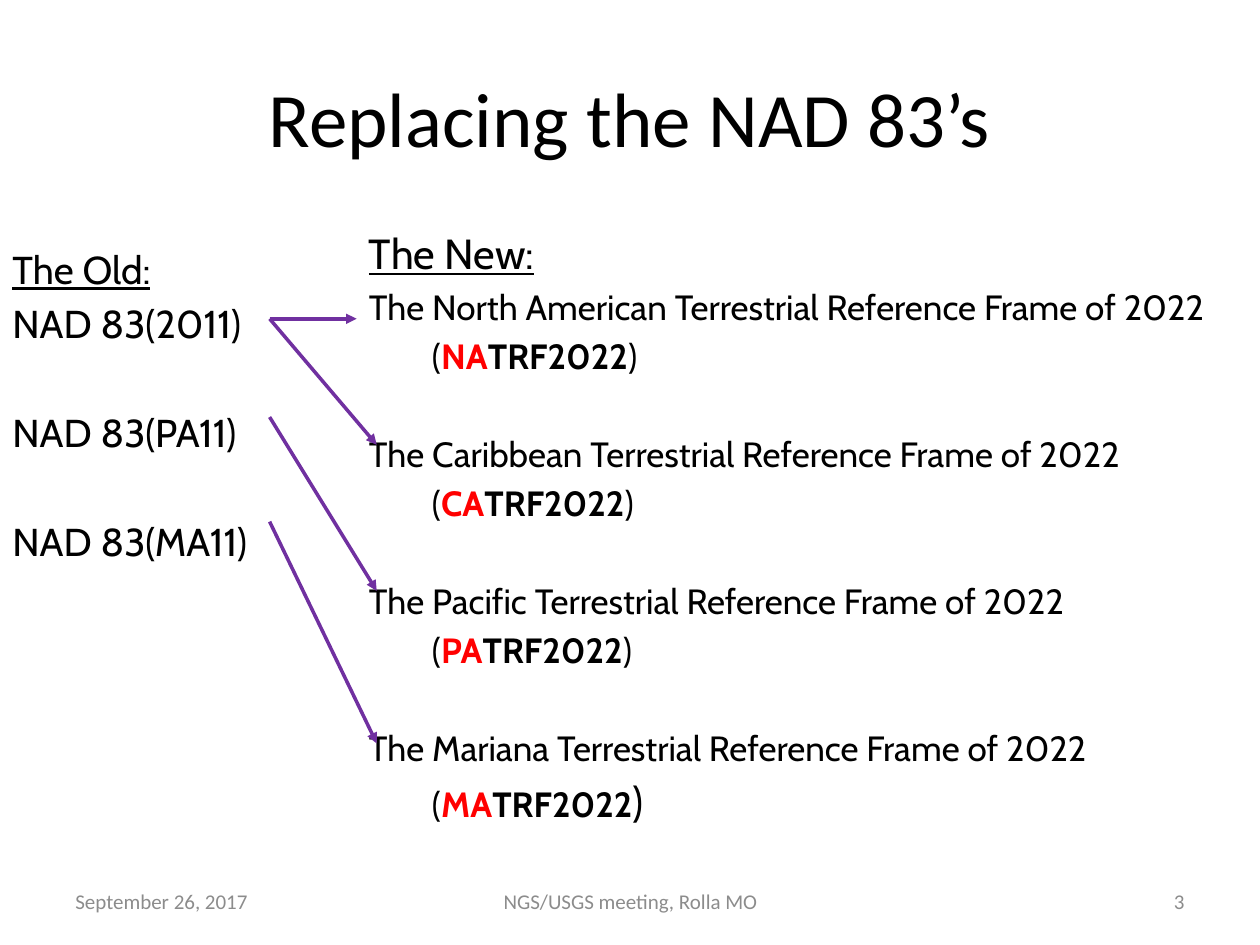
import dataclasses

import pptx
import pptx.dml.color
import pptx.enum.shapes
import pptx.enum.text
import pptx.oxml.ns
import pptx.util
from lxml import etree

Inches = pptx.util.Inches
Pt = pptx.util.Pt
ALIGN = pptx.enum.text.PP_ALIGN
ANCHOR = pptx.enum.text.MSO_ANCHOR


@dataclasses.dataclass(frozen=True)
class Theme:
    heading_font: str = "Calibri"
    body_font: str = "Cabin"
    text: str = "000000"
    accent: str = "FF0000"
    arrow: str = "7030A0"
    muted: str = "8C8C8C"
    title_size: float = 44
    new_size: float = 24
    old_size: float = 22.2
    frame_size: float = 20
    footer_size: float = 12
    arrow_width: float = 2


def rgb(value):
    return pptx.dml.color.RGBColor.from_string(value)


class Deck:
    def __init__(self, theme):
        self.theme = theme
        self.prs = pptx.Presentation()
        self.prs.slide_width, self.prs.slide_height = Inches(10), Inches(7.5)
        self.s = self.prs.slides.add_slide(self.prs.slide_layouts[5])

    def run(self, p, text, size, color=None, font=None, bold=False, underline=False):
        r = p.add_run()
        r.text = text
        r.font.name = font or self.theme.body_font
        r.font.size = Pt(size)
        r.font.color.rgb = rgb(color or self.theme.text)
        r.font.bold = bold
        r.font.underline = underline

    def title(self, text, x, y, w, h):
        sp = self.s.shapes.title
        sp.left, sp.top, sp.width, sp.height = map(Inches, (x, y, w, h))
        tf = sp.text_frame
        tf.vertical_anchor = ANCHOR.MIDDLE
        p = tf.paragraphs[0]
        p.alignment = ALIGN.CENTER
        self.run(p, text, self.theme.title_size, font=self.theme.heading_font)

    def box(self, x, y, w, h, anchor=ANCHOR.TOP):
        tf = self.s.shapes.add_textbox(*map(Inches, (x, y, w, h))).text_frame
        tf.word_wrap = True
        tf.vertical_anchor = anchor
        return tf

    def paragraph(self, tf, space_before):
        p = tf.add_paragraph()
        p.space_before = Pt(space_before)
        return p

    def old_list(self, heading, names, x, y, w, h):
        size = self.theme.old_size
        tf = self.box(x, y, w, h)
        self.run(tf.paragraphs[0], heading, size, underline=True)
        for i, name in enumerate(names):
            p = self.paragraph(tf, 35.5 if i else 4.4)
            self.run(p, name, size)

    def new_list(self, heading, frames, x, y, w, h):
        t = self.theme
        size = t.frame_size
        tf = self.box(x, y, w, h)
        self.run(tf.paragraphs[0], heading, t.new_size, underline=True)
        for i, (region, prefix) in enumerate(frames):
            p = self.paragraph(tf, 32 if i else 4)
            self.run(p, f"The {region} Terrestrial Reference Frame of 2022", size)
            p = self.paragraph(tf, 4)
            self.run(p, "\t(", size)
            self.run(p, prefix, size, color=t.accent, bold=True)
            self.run(p, "TRF2022", size, bold=True)
            last = i == len(frames) - 1
            self.run(p, ")", t.new_size if last else size)

    def footer(self, text, x, w, align):
        t = self.theme
        p = self.box(x, 6.95, w, 0.4, ANCHOR.MIDDLE).paragraphs[0]
        p.alignment = align
        self.run(p, text, t.footer_size, t.muted, t.heading_font)

    def arrow(self, x1, y1, x2, y2):
        c = self.s.shapes.add_connector(
            pptx.enum.shapes.MSO_CONNECTOR.STRAIGHT, *map(Inches, (x1, y1, x2, y2))
        )
        c.line.color.rgb = rgb(self.theme.arrow)
        c.line.width = Pt(self.theme.arrow_width)
        qn = pptx.oxml.ns.qn
        etree.SubElement(c.line._get_or_add_ln(), qn("a:tailEnd"), type="triangle")
        etree.SubElement(c._element.spPr, qn("a:effectLst"))


def main():
    deck = Deck(Theme())
    deck.title("Replacing the NAD 83’s", 0.5, 0.3, 9, 1.25)
    deck.old_list(
        "The Old:", ["NAD 83(2011)", "NAD 83(PA11)", "NAD 83(MA11)"], 0, 1.9, 2.99, 2.58
    )
    frames = [
        ("North American", "NA"),
        ("Caribbean", "CA"),
        ("Pacific", "PA"),
        ("Mariana", "MA"),
    ]
    deck.new_list("The New:", frames, 2.83, 1.76, 6.92, 5.25)
    deck.footer("September 26, 2017", 0.5, 2.33, ALIGN.LEFT)
    deck.footer("NGS/USGS meeting, Rolla MO", 3.42, 3.17, ALIGN.CENTER)
    for y1, x2, y2 in [
        (2.53, 2.83, 2.53),
        (2.53, 2.99, 3.53),
        (3.31, 2.99, 4.69),
        (4.14, 2.99, 5.9),
    ]:
        deck.arrow(2.14, y1, x2, y2)
    deck.footer("3", 7.17, 2.33, ALIGN.RIGHT)
    deck.prs.save("out.pptx")


if __name__ == "__main__":
    main()
